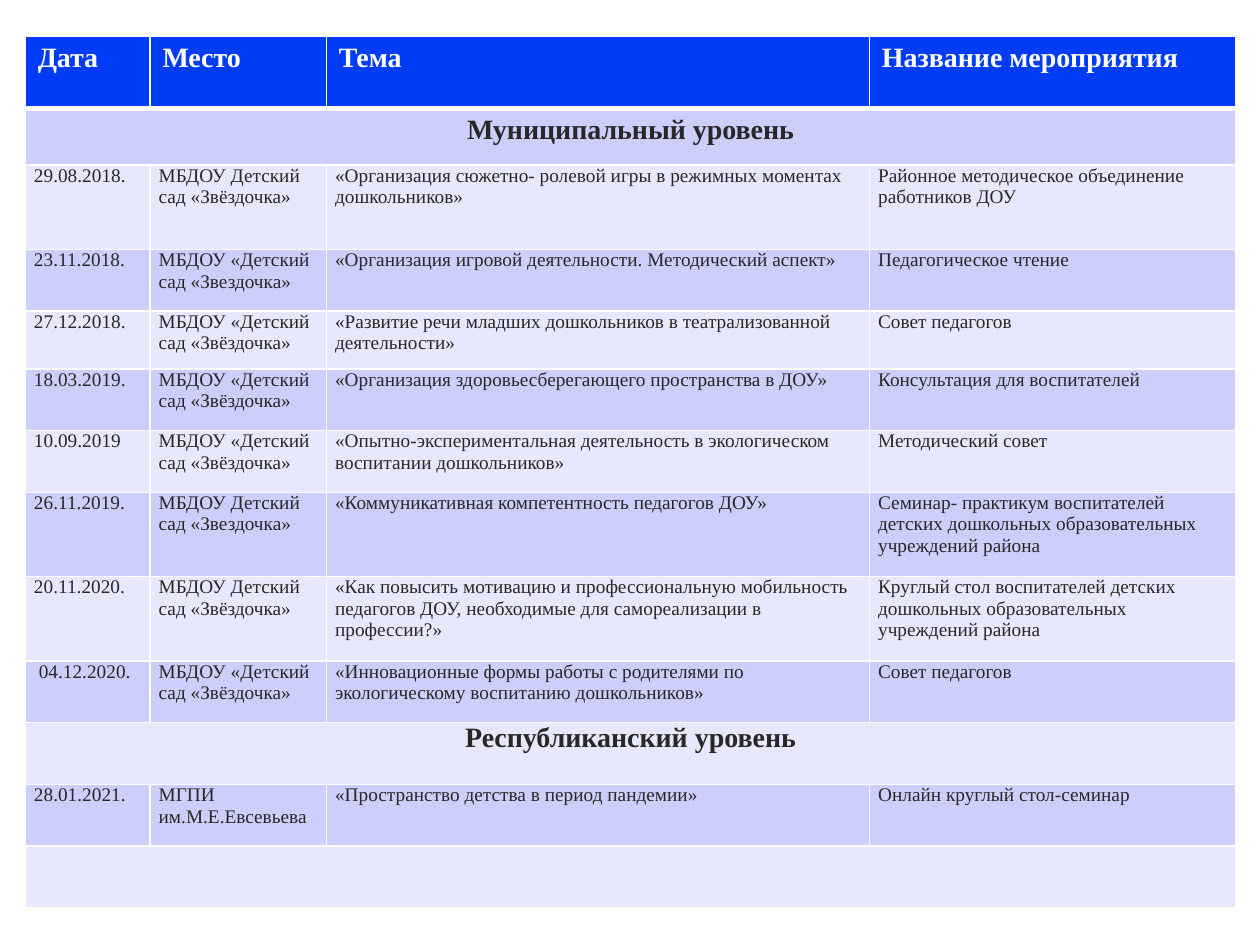
"""Builds a slide with a table of teachers' talks by date, place, topic and event."""
from lxml import etree
from pptx import Presentation
from pptx.dml.color import RGBColor
from pptx.enum.text import PP_ALIGN
from pptx.oxml.ns import qn
from pptx.util import Inches, Pt

LEFT, CENTER = PP_ALIGN.LEFT, PP_ALIGN.CENTER
FONT = "Times New Roman"
WHITE, INK, BLUE = "FFFFFF", "282828", "003CF6"
BANDS = ("E7E8FD", "CCCEFB")
TABLE_LEFT, TABLE_TOP = 0.02, 0.0387
COLUMN_SHARES = (0.099, 0.14, 0.431, 0.291)
TALL, MEDIUM, LOW = 0.0893, 0.0653, 0.0613
ROW_SHARES = (0.076, 0.06, TALL, MEDIUM, LOW, MEDIUM, MEDIUM, TALL, TALL) + (MEDIUM,) * 4
TIGHT, ROOMY = (0.07, 0), (0.1, 0.05)
THIN, THICK = 1, 3

PLACE = "МБДОУ «Детский сад «Звёздочка»"
SHORT_PLACE = "МБДОУ Детский сад «Звёздочка»"
ROWS = (
    ("Дата", "Место", "Тема", "Название мероприятия"),
    ("Муниципальный уровень",),
    ("29.08.2018.", SHORT_PLACE,
     "«Организация сюжетно- ролевой игры в режимных моментах дошкольников»",
     "Районное методическое объединение работников ДОУ"),
    ("23.11.2018.", "МБДОУ «Детский сад «Звездочка»",
     "«Организация игровой деятельности. Методический аспект»",
     "Педагогическое чтение"),
    ("27.12.2018.", PLACE,
     "«Развитие речи младших дошкольников в театрализованной деятельности»",
     "Совет педагогов"),
    ("18.03.2019.", PLACE,
     "«Организация здоровьесберегающего пространства в ДОУ»",
     "Консультация для воспитателей"),
    ("10.09.2019", PLACE,
     "«Опытно-экспериментальная деятельность в экологическом воспитании дошкольников»",
     "Методический совет"),
    ("26.11.2019.", "МБДОУ Детский сад «Звездочка»",
     "«Коммуникативная компетентность педагогов ДОУ»",
     "Семинар- практикум воспитателей детских дошкольных образовательных "
     "учреждений района"),
    ("20.11.2020.", SHORT_PLACE,
     "«Как повысить мотивацию и профессиональную мобильность педагогов ДОУ, "
     "необходимые для самореализации в профессии?»",
     "Круглый стол воспитателей детских дошкольных образовательных "
     "учреждений района"),
    (" 04.12.2020.", PLACE,
     "«Инновационные формы работы с родителями по экологическому воспитанию "
     "дошкольников»",
     "Совет педагогов"),
    ("Республиканский уровень",),
    ("28.01.2021.", "МГПИ им.М.Е.Евсевьева",
     "«Пространство детства в период пандемии»",
     "Онлайн круглый стол-семинар"),
    (),
)


def color(value):
    """Turn a hex string into a colour."""
    return RGBColor.from_string(value)


def write(cell, text, size=11, ink=INK, bold=False, align=LEFT, margins=TIGHT):
    """Put formatted text into a cell."""
    cell.margin_left = cell.margin_right = Inches(margins[0])
    cell.margin_top = cell.margin_bottom = Inches(margins[1])
    para = cell.text_frame.paragraphs[0]
    para.alignment = align
    span = para.add_run()
    span.text = text
    span.font.name = FONT
    span.font.size = Pt(size)
    span.font.bold = bold
    span.font.color.rgb = color(ink)


def add_borders(cell, top=THIN, bottom=THIN):
    """Draw white lines on the four sides of a cell."""
    properties = cell._tc.get_or_add_tcPr()
    for side, width in (("L", THIN), ("R", THIN), ("T", top), ("B", bottom)):
        line = etree.SubElement(properties, qn(f"a:ln{side}"), w=str(Pt(width)))
        fill = etree.SubElement(line, qn("a:solidFill"))
        etree.SubElement(fill, qn("a:srgbClr"), val=WHITE)


def paint_row(cells, index):
    """Give a row its borders and its header or band colour."""
    for cell in cells:
        add_borders(cell, top=THICK if index == 1 else THIN,
                    bottom=THICK if index == 0 else THIN)
        cell.fill.solid()
        cell.fill.fore_color.rgb = color(BANDS[index % 2] if index else BLUE)


def fill_row(cells, texts, index):
    """Write a row as header, section title or entry."""
    if len(texts) < len(cells):
        cells[0].merge(cells[-1])
    for cell, text in zip(cells, texts):
        if index == 0:
            write(cell, text, size=16, ink=WHITE, bold=True, margins=ROOMY)
        elif len(texts) == 1:
            write(cell, text, size=16, bold=True, align=CENTER,
                  margins=ROOMY if index == 1 else TIGHT)
        else:
            write(cell, text)


def add_schedule(page, width, height):
    """Add the table, sized by shares of the slide."""
    frame = page.shapes.add_table(
        len(ROWS), len(COLUMN_SHARES),
        int(width * TABLE_LEFT), int(height * TABLE_TOP),
        int(width * sum(COLUMN_SHARES)), int(height * sum(ROW_SHARES)))
    table = frame.table
    for column, share in zip(table.columns, COLUMN_SHARES):
        column.width = int(width * share)
    for index, (row, share, texts) in enumerate(zip(table.rows, ROW_SHARES, ROWS)):
        row.height = int(height * share)
        cells = list(row.cells)
        paint_row(cells, index)
        fill_row(cells, texts, index)


def main():
    """Build the deck and save it."""
    deck = Presentation()
    deck.slide_width, deck.slide_height = Inches(10), Inches(7.5)
    page = deck.slides.add_slide(deck.slide_layouts[6])
    add_schedule(page, deck.slide_width, deck.slide_height)
    deck.save("out.pptx")


if __name__ == "__main__":
    main()
